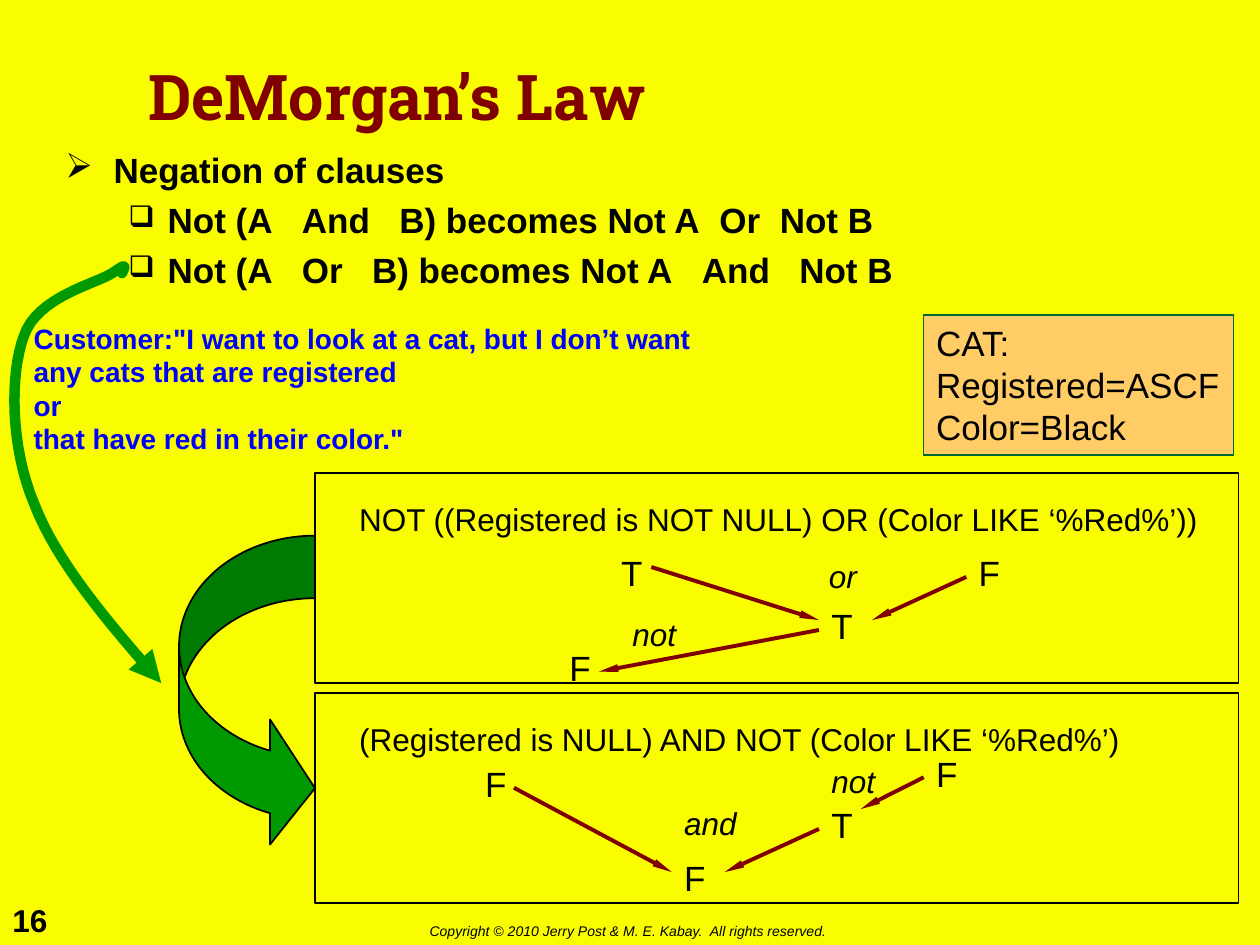
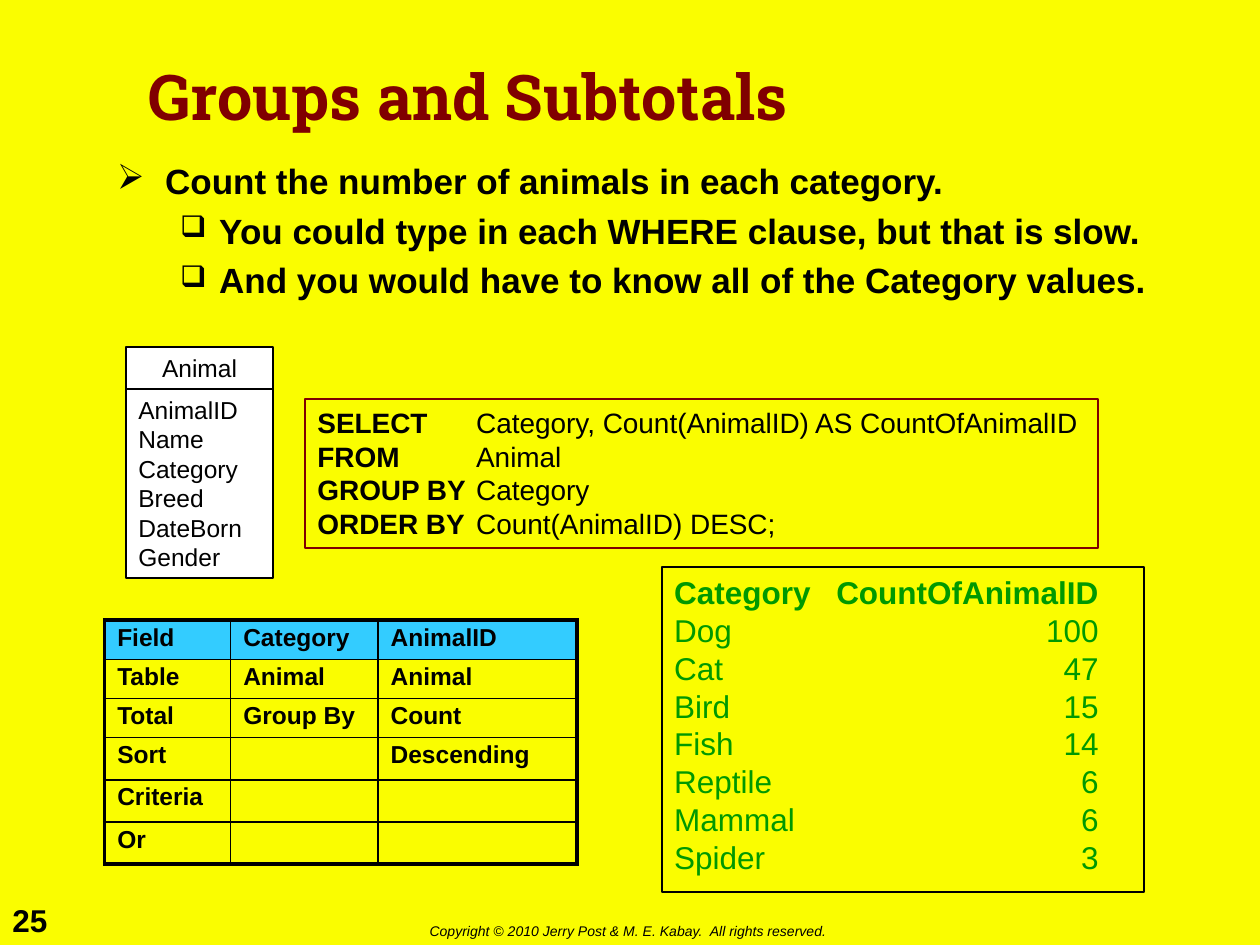
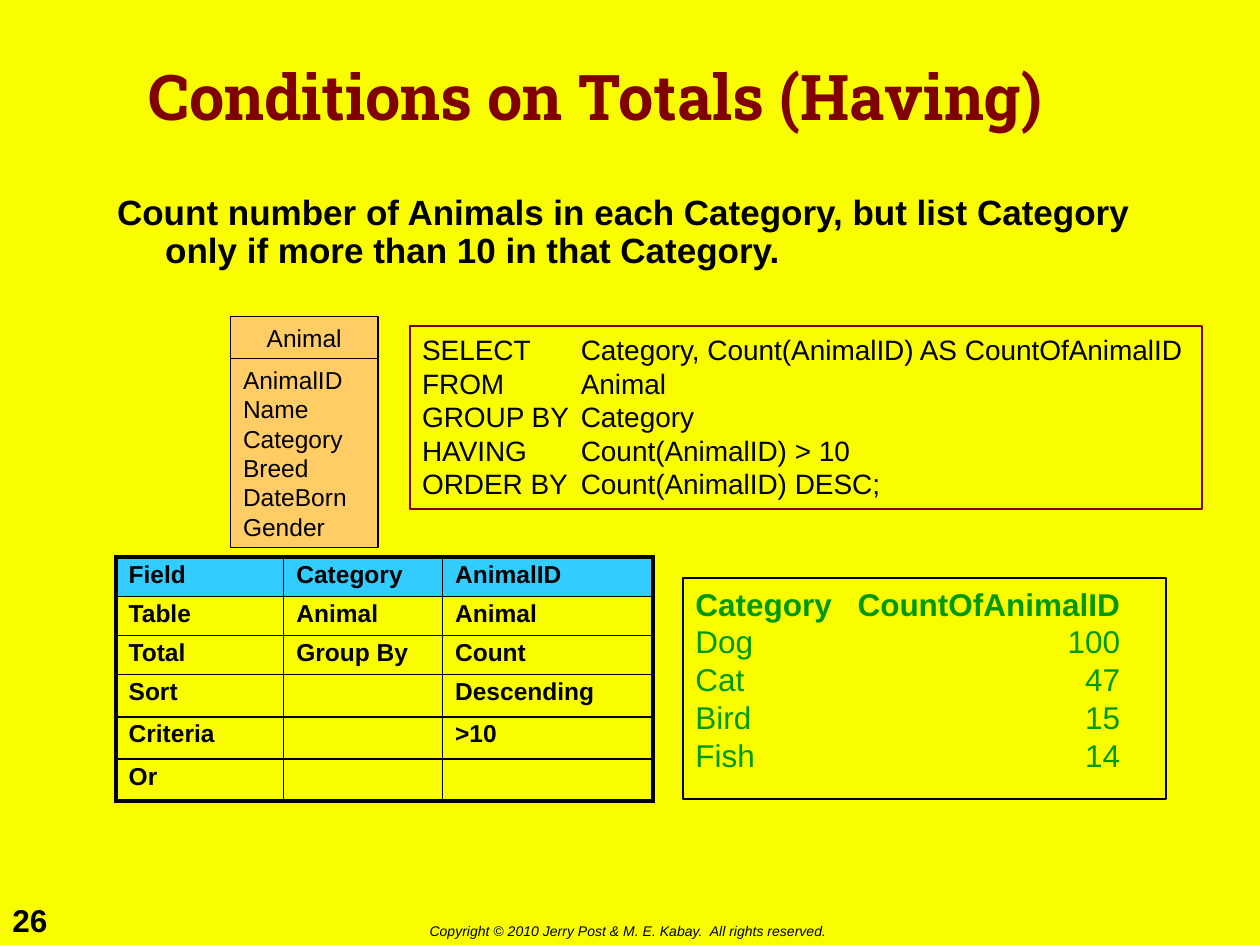
from lxml import etree
from pptx import Presentation
from pptx.dml.color import RGBColor
from pptx.enum import shapes, text
from pptx.oxml import ns
from pptx.util import Cm, Pt

YELLOW, MAROON, BLACK, GREEN = "FAFD00", "800000", "000000", "009900"
ORANGE, WHITE, SKY, BLUE, DARK_GREEN = "FFCC66", "FFFFFF", "33CCFF", "0000FF", "006633"
BODY_FONT, TITLE_FONT = "Arial", "Roboto Slab"
COPYRIGHT = "Copyright © 2010 Jerry Post & M. E. Kabay.  All rights reserved."

# A line is a string or a list of (text, bold, letter spacing in points).
WIDE, NARROW = 11.1, 5.55


def spaced(*words):
    """Join words by spaces widened by the number between them."""
    return [(" ", True, word) if isinstance(word, float) else (word, True, 0) for word in words]


NEGATION = [
    "Negation of clauses",
    spaced("Not (A", WIDE, "And", WIDE, "B) becomes Not A", NARROW, "Or", NARROW, "Not B"),
    spaced("Not (A", WIDE, "Or", WIDE, "B) becomes Not A", WIDE, "And", WIDE, "Not B"),
]
CUSTOMER = ["Customer:\"I want to look at a cat, but I don’t want", "any cats that are registered",
            "or", "that have red in their color.\""]
CAT = ["CAT: Registered=ASCF", "Color=Black"]
CONDITIONS = [  # left, top, width, text
    (6.99, 9.96, 17.45, "NOT ((Registered is NOT NULL) OR (Color LIKE ‘%Red%’))"),
    (6.99, 14.4, 15.9, "(Registered is NULL) AND NOT (Color LIKE ‘%Red%’)"),
]
OPERATORS = [(16.46, 11.1, 1.07, "or"), (12.5, 12.27, 1.4, "not"),
             (13.54, 16.08, 1.57, "and"), (16.51, 15.04, 1.4, "not")]
OPERATORS[3] = (16.51, 15.24, 1.4, "not")
TRUTH_VALUES = [(12.27, 11, "T"), (19.48, 11, "F"), (16.51, 12.07, "T"), (11.23, 12.9, "F"),
                (9.53, 15.24, "F"), (16.51, 16.08, "T"), (13.54, 17.15, "F"), (18.62, 15.04, "F")]
ARROWS = [(13.13, 11.43, 16.51, 12.5), (19.48, 11.63, 17.58, 12.5), (16.51, 12.7, 12.07, 13.54),
          (10.36, 15.88, 13.54, 17.58), (16.51, 16.71, 14.61, 17.58), (18.62, 15.67, 17.35, 16.31)]
PANEL_TOPS = (13.97, 9.53)
SWEEP = [(2.46, 5.51), (2.51, 5.38), (2.59, 5.28), (2.26, 5.51), (1.93, 5.72), (0.74, 5.99),
         (0.48, 6.78), (0.2, 7.54), (0.2, 8.99), (0.69, 10.16), (1.14, 11.33), (2.18, 12.55),
         (3.25, 13.77)]

FIELDS = ["AnimalID", "Name", "Category", "Breed", "DateBorn", "Gender"]
COUNTS = [("Dog", 100), ("Cat", 47), ("Bird", 15), ("Fish", 14),
          ("Reptile", 6), ("Mammal", 6), ("Spider", 3)]
SELECT = [("SELECT", "Category, Count(AnimalID) AS CountOfAnimalID"), ("FROM", "Animal"),
          ("GROUP BY", "Category")]
ORDER = [("ORDER BY", "Count(AnimalID) DESC;")]
HAVING = [("HAVING", "Count(AnimalID) > 10")]


def query_grid(criterion):
    return [("Field", "Category", "AnimalID"), ("Table", "Animal", "Animal"),
            ("Total", "Group By", "Count"), ("Sort", "", "Descending"),
            ("Criteria", "", criterion), ("Or", "", "")]


QUERY_PAGES = [
    dict(number=25, title="Groups and Subtotals",
         body=["Count the number of animals in each category.",
               "You could type in each WHERE clause, but that is slow.",
               "And you would have to know all of the Category values."],
         body_place=(2.11, 3.18, 21.79, 3.61), bullets=True,
         clauses=SELECT + ORDER, bold_keywords=True, sql_place=(6.15, 8.05, 15.98, 3),
         entity=(2.54, 6.99), entity_fill=WHITE,
         grid=query_grid(""), grid_at=(2.11, 12.5), columns=(2.54, 2.97, 4.01),
         counts=COUNTS, counts_place=(13.34, 11.43, 9.73, 6.55)),
    dict(number=26, title="Conditions on Totals (Having)",
         body=["Count number of Animals in each Category, but list Category "
               "only if more than 10 in that Category."],
         body_place=(2.11, 3.81, 21.16, 2.11), bullets=False,
         clauses=SELECT + HAVING + ORDER, bold_keywords=False, sql_place=(8.26, 6.58, 15.98, 3.68),
         entity=(4.65, 6.38), entity_fill=ORANGE,
         grid=query_grid(">10"), grid_at=(2.34, 11.23), columns=(3.38, 3.2, 4.24),
         counts=COUNTS[:4], counts_place=(13.77, 11.66, 9.73, 4.45)),
]


def rgb(value):
    return RGBColor.from_string(value)


def child(parent, tag, **attributes):
    return etree.SubElement(parent, ns.qn(tag), attributes)


def write(frame, lines, size, color=BLACK, bold=False, italic=False, font=BODY_FONT,
          spacing=None, wrap=True, anchor=text.MSO_ANCHOR.TOP, tab=None,
          align=text.PP_ALIGN.LEFT):
    frame.word_wrap, frame.vertical_anchor = wrap, anchor
    for index, line in enumerate(lines):
        para = frame.add_paragraph() if index else frame.paragraphs[0]
        para.alignment, para.line_spacing = align, spacing
        if tab:
            tabs = child(para._p.get_or_add_pPr(), "a:tabLst")
            child(tabs, "a:tab", pos=str(Cm(tab[0])), algn=tab[1])
        for words, heavy, letter_gap in [(line, bold, 0)] if isinstance(line, str) else line:
            span = para.add_run()
            span.text = words
            span.font.name, span.font.size = font, Pt(size)
            span.font.bold, span.font.italic = heavy, italic
            span.font.color.rgb = rgb(color)
            if letter_gap:
                span._r.get_or_add_rPr().set("spc", str(round(letter_gap * 100)))


def add_text(page, place, lines, size, **style):
    box = page.shapes.add_textbox(*map(Cm, place))
    write(box.text_frame, lines, size, **style)
    return box


def add_box(page, place, fill=None, line=BLACK, kind=shapes.MSO_SHAPE.RECTANGLE):
    box = page.shapes.add_shape(kind, *map(Cm, place))
    paint(box, fill, line, 1)
    return box


def paint(shape, fill, line, width):
    shape.shadow.inherit = False
    if fill:
        shape.fill.solid()
        shape.fill.fore_color.rgb = rgb(fill)
    else:
        shape.fill.background()
    shape.line.color.rgb, shape.line.width = rgb(line), Pt(width)


def add_page(deck, number, title):
    page = deck.slides.add_slide(deck.slide_layouts[6])
    add_text(page, (0, 18.03, 1.27, 1.02), [str(number)], 18, bold=True, wrap=False)
    add_text(page, (8.41, 18.47, 8.79, 0.61), [COPYRIGHT], 8, italic=True, wrap=False)
    add_text(page, (2.74, 0.43, 19.89, 3.18), [title], 36, color=MAROON, bold=True,
             font=TITLE_FONT, spacing=0.9, anchor=text.MSO_ANCHOR.MIDDLE)
    return page


def add_body(page, place, lines, bullets=True):
    box = add_text(page, place, lines, 20, bold=True, spacing=0.9)
    for index, para in enumerate(box.text_frame.paragraphs):
        margin, hanging, mark, percent = (2.06, 0.79, "❑", 85) if index else (0.97, 0.97, "➢", 100)
        if index:
            para.space_before = Pt(6.9)
        props = para._p.get_or_add_pPr()
        props.set("marL", str(Cm(margin)))
        props.set("indent", str(-Cm(hanging)))
        if bullets:
            child(child(props, "a:buClr"), "a:srgbClr", val=BLACK)
            child(props, "a:buSzPct", val=str(percent * 1000))
            child(props, "a:buChar", char=mark)


def add_arrow(page, ends):
    arrow = page.shapes.add_connector(shapes.MSO_CONNECTOR.STRAIGHT, *map(Cm, ends))
    arrow.line.color.rgb, arrow.line.width = rgb(MAROON), Pt(2.25)
    child(arrow.line._get_or_add_ln(), "a:tailEnd", type="triangle", w="sm", len="lg")
    child(arrow._element.spPr, "a:effectLst")


def curve_points(controls, steps=16):
    """Points along a chain of cubic Bézier segments."""
    points = [controls[0]]
    for start in range(0, len(controls) - 1, 3):
        segment = controls[start:start + 4]
        for step in range(1, steps + 1):
            t = step / steps
            weights = ((1 - t) ** 3, 3 * t * (1 - t) ** 2, 3 * t * t * (1 - t), t ** 3)
            points.append(tuple(sum(w * p[axis] for w, p in zip(weights, segment))
                                for axis in (0, 1)))
    return points


def add_sweep(page):
    points = [(Cm(x), Cm(y)) for x, y in curve_points(SWEEP)]
    builder = page.shapes.build_freeform(*points[0])
    builder.add_line_segments(points[1:], close=False)
    sweep = builder.convert_to_shape()
    paint(sweep, None, GREEN, 6)
    line = sweep.line._get_or_add_ln()
    line.set("cap", "rnd")
    child(line, "a:round")
    child(line, "a:tailEnd", type="triangle")


def add_grid(page, at, columns, rows):
    heights = [0.79] * 3 + [0.85] * 3
    table = page.shapes.add_table(len(rows), len(columns), *map(Cm, at),
                                  Cm(sum(columns)), Cm(sum(heights))).table
    for column, width in zip(table.columns, columns):
        column.width = Cm(width)
    for r, row in enumerate(rows):
        table.rows[r].height = Cm(heights[r])
        for c, words in enumerate(row):
            cell = table.cell(r, c)
            outer = {"L": c == 0, "R": c == len(row) - 1, "T": r == 0, "B": r == len(rows) - 1}
            for side, edge in outer.items():
                line = child(cell._tc.get_or_add_tcPr(), f"a:ln{side}",
                             w=str(Pt(2.25 if edge else 1)))
                child(child(line, "a:solidFill"), "a:srgbClr", val=BLACK)
            if r == 0:
                cell.fill.solid()
                cell.fill.fore_color.rgb = rgb(SKY)
            else:
                cell.fill.background()
            if words:
                write(cell.text_frame, [words], 14, bold=True, spacing=0.9)
            else:
                cell.text_frame.paragraphs[0]._p.get_or_add_endParaRPr().set("sz", "1400")


def add_entity(page, left, top, fill):
    header_height, width = 0.85, 2.97
    fields = add_box(page, (left, top + header_height, width, 3.81), fill)
    write(fields.text_frame, FIELDS, 14, wrap=False)
    header = add_box(page, (left, top, width, header_height), fill)
    write(header.text_frame, ["Animal"], 14, wrap=False, anchor=text.MSO_ANCHOR.MIDDLE,
          align=text.PP_ALIGN.CENTER)


def add_law_page(deck):
    page = add_page(deck, 16, "DeMorgan’s Law")
    add_body(page, (1.07, 2.97, 18.21, 3.38), NEGATION)
    cat = add_box(page, (18.62, 6.35, 6.25, 2.82), ORANGE, DARK_GREEN)
    write(cat.text_frame, CAT, 20)
    add_text(page, (0.43, 6.35, 16.08, 2.97), CUSTOMER, 16, color=BLUE, bold=True)
    for left, top, width, words in CONDITIONS:
        add_text(page, (left, top, width, 1.02), [words], 18, wrap=False)
    for left, top, width, words in OPERATORS:
        add_text(page, (left, top, width, 1.02), [words], 18, italic=True, wrap=False)
    for left, top, letter in TRUTH_VALUES:
        add_text(page, (left, top, 0.94, 1.09), [letter], 20, wrap=False)
    for ends in ARROWS:
        add_arrow(page, ends)
    for top in PANEL_TOPS:
        add_box(page, (6.35, top, 18.62, 4.24))
    turn = add_box(page, (3.61, 10.8, 2.74, 6.35), GREEN,
                   kind=shapes.MSO_SHAPE.CURVED_RIGHT_ARROW)
    for index, value in enumerate((0.46, 0.92, 0.33)):
        turn.adjustments[index] = value
    add_sweep(page)


def add_query_page(deck, item):
    page = add_page(deck, item["number"], item["title"])
    add_body(page, item["body_place"], item["body"], item["bullets"])
    sql = add_box(page, item["sql_place"], line=MAROON)
    clauses = [[(keyword, item["bold_keywords"], 0), ("\t" + rest, False, 0)]
               for keyword, rest in item["clauses"]]
    write(sql.text_frame, clauses, 16, wrap=False, tab=(3.2, "l"))
    add_entity(page, *item["entity"], item["entity_fill"])
    add_grid(page, item["grid_at"], item["columns"], item["grid"])
    counts = add_box(page, item["counts_place"])
    lines = [[("Category\tCountOfAnimalID", True, 0)]]
    lines += [f"{category}\t{count}" for category, count in item["counts"]]
    write(counts.text_frame, lines, 18, color=GREEN, wrap=False, tab=(8.56, "r"))
    counts.text_frame.vertical_anchor = text.MSO_ANCHOR.TOP


def main():
    deck = Presentation()
    deck.slide_width, deck.slide_height = Cm(25.4), Cm(19.05)
    background = deck.slide_master.background.fill
    background.solid()
    background.fore_color.rgb = rgb(YELLOW)
    add_law_page(deck)
    for item in QUERY_PAGES:
        add_query_page(deck, item)
    deck.save("out.pptx")


if __name__ == "__main__":
    main()
